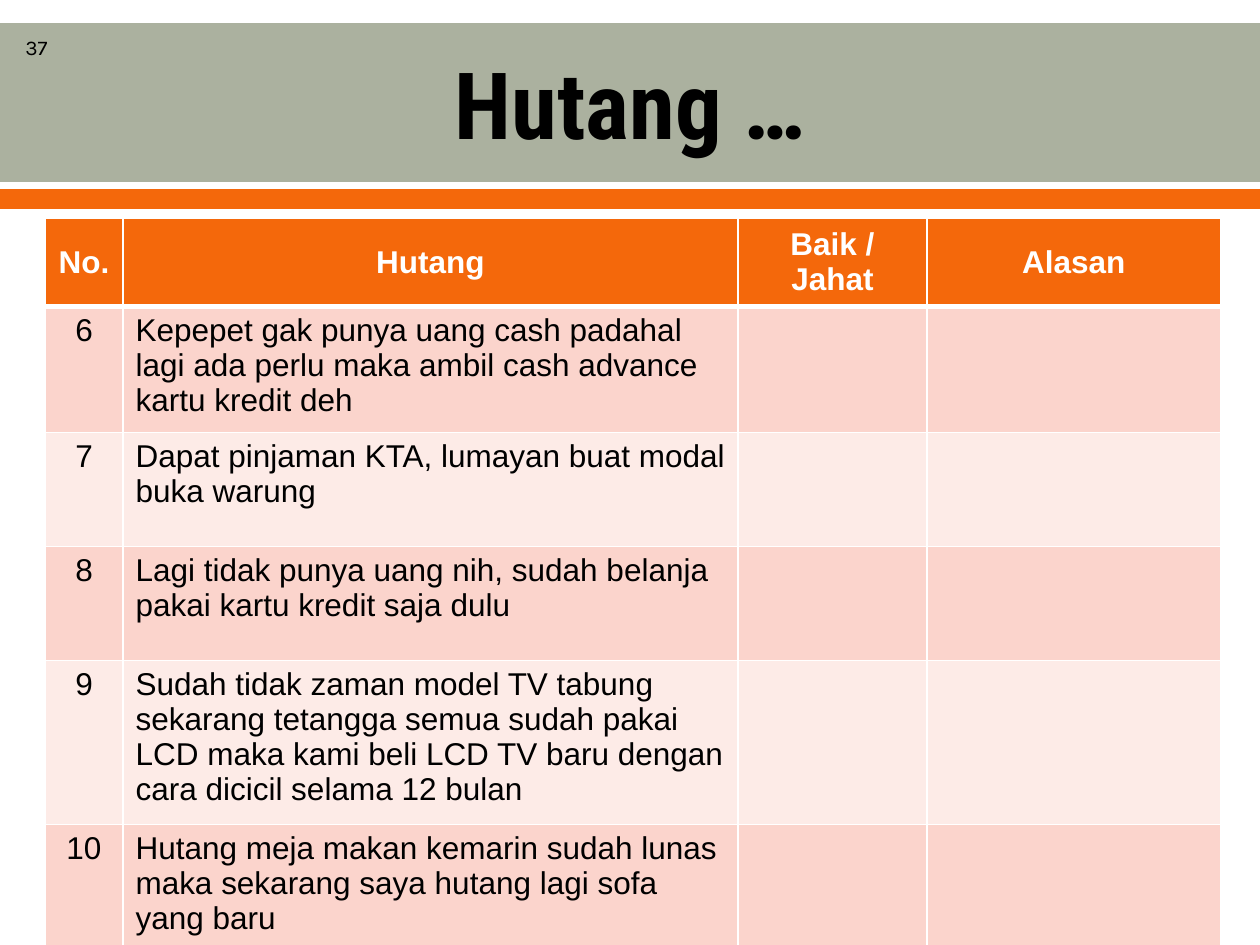
from lxml import etree
from pptx import Presentation
from pptx.dml.color import RGBColor
from pptx.enum.shapes import MSO_SHAPE
from pptx.enum.text import MSO_ANCHOR as ANCHOR, PP_ALIGN as ALIGN
from pptx.oxml.ns import qn
from pptx.util import Emu, Pt

PX = 914400 // 126
BLACK = RGBColor(0, 0, 0)
WHITE = RGBColor(0xFF, 0xFF, 0xFF)
SAGE = RGBColor(0xAB, 0xB1, 0x9F)
ORANGE = RGBColor(0xF4, 0x68, 0x0B)
BANDS = (RGBColor(0xFB, 0xD4, 0xCC), RGBColor(0xFD, 0xEB, 0xE7))

HEADERS = ("No.", "Hutang", "Baik / Jahat", "Alasan")
DEBTS = (
    "Kepepet gak punya uang cash padahal lagi ada perlu maka ambil cash advance kartu kredit deh",
    "Dapat pinjaman KTA, lumayan buat modal buka warung",
    "Lagi tidak punya uang nih, sudah belanja pakai kartu kredit saja dulu",
    "Sudah tidak zaman model TV tabung sekarang tetangga semua sudah pakai LCD "
    "maka kami beli LCD TV baru dengan cara dicicil selama 12 bulan",
    "Hutang meja makan kemarin sudah lunas maka sekarang saya hutang lagi sofa yang baru",
)
FIRST_NUMBER = 6
COL_WIDTHS = (78, 615, 189, 294)
ROW_HEIGHTS = (73, 126, 114, 114, 164, 126)


def box(*lengths):
    return [Emu(n * PX) for n in lengths]


def style(p, size, font, color, bold=False, align=ALIGN.CENTER):
    p.alignment = align
    p.font.size = Pt(size)
    p.font.name = font
    p.font.bold = bold
    p.font.color.rgb = color


def add_band(slide, top, height, color):
    sp = slide.shapes.add_shape(MSO_SHAPE.RECTANGLE, *box(0, top, 1260, height))
    sp.shadow.inherit = False
    sp.fill.solid()
    sp.fill.fore_color.rgb = color
    sp.line.fill.background()


def add_text(slide, lengths, text, size, font, bold=False, anchor=ANCHOR.TOP):
    tf = slide.shapes.add_textbox(*box(*lengths)).text_frame
    tf.word_wrap = True
    tf.vertical_anchor = anchor
    p = tf.paragraphs[0]
    p.text = text
    style(p, size, font, BLACK, bold)


def set_borders(cell, **widths):
    """Draw white cell borders; widths are points keyed by side, in L, R, T, B order."""
    tc_pr = cell._tc.get_or_add_tcPr()
    for i, (side, width) in enumerate(widths.items()):
        ln = etree.Element(qn(f"a:ln{side}"), w=str(Pt(width)))
        fill = etree.SubElement(ln, qn("a:solidFill"))
        etree.SubElement(fill, qn("a:srgbClr"), val=str(WHITE))
        tc_pr.insert(i, ln)


def fill_cell(cell, row, col, text):
    header = row == 0
    cell.fill.solid()
    cell.fill.fore_color.rgb = ORANGE if header else BANDS[(row - 1) % 2]
    cell.vertical_anchor = ANCHOR.MIDDLE if header else ANCHOR.TOP
    p = cell.text_frame.paragraphs[0]
    p.text = text
    align = ALIGN.CENTER if header or col == 0 else ALIGN.LEFT
    style(p, 18, "Arial", WHITE if header else BLACK, header, align)
    set_borders(cell, L=1, R=1, T=3 if row == 1 else 1, B=3 if header else 1)


def add_debt_table(slide):
    rows = [HEADERS] + [(str(n), debt, "", "") for n, debt in enumerate(DEBTS, FIRST_NUMBER)]
    size = (sum(COL_WIDTHS), sum(ROW_HEIGHTS))
    table = slide.shapes.add_table(len(rows), len(HEADERS), *box(45, 218, *size)).table
    for column, width in zip(table.columns, COL_WIDTHS):
        column.width = Emu(width * PX)
    for row, height in zip(table.rows, ROW_HEIGHTS):
        row.height = Emu(height * PX)
    for r, texts in enumerate(rows):
        for c, text in enumerate(texts):
            fill_cell(table.cell(r, c), r, c, text)


def main():
    prs = Presentation()
    prs.slide_width, prs.slide_height = box(1260, 945)
    slide = prs.slides.add_slide(prs.slide_layouts[6])
    add_band(slide, 23, 159, SAGE)
    add_band(slide, 189, 20, ORANGE)
    add_text(slide, (63, 25, 1134, 154), "Hutang …", 53, "Roboto Condensed", True, ANCHOR.MIDDLE)
    add_debt_table(slide)
    add_text(slide, (0, 28, 73, 38), "37", 12, "Karla")
    prs.save("out.pptx")


if __name__ == "__main__":
    main()
